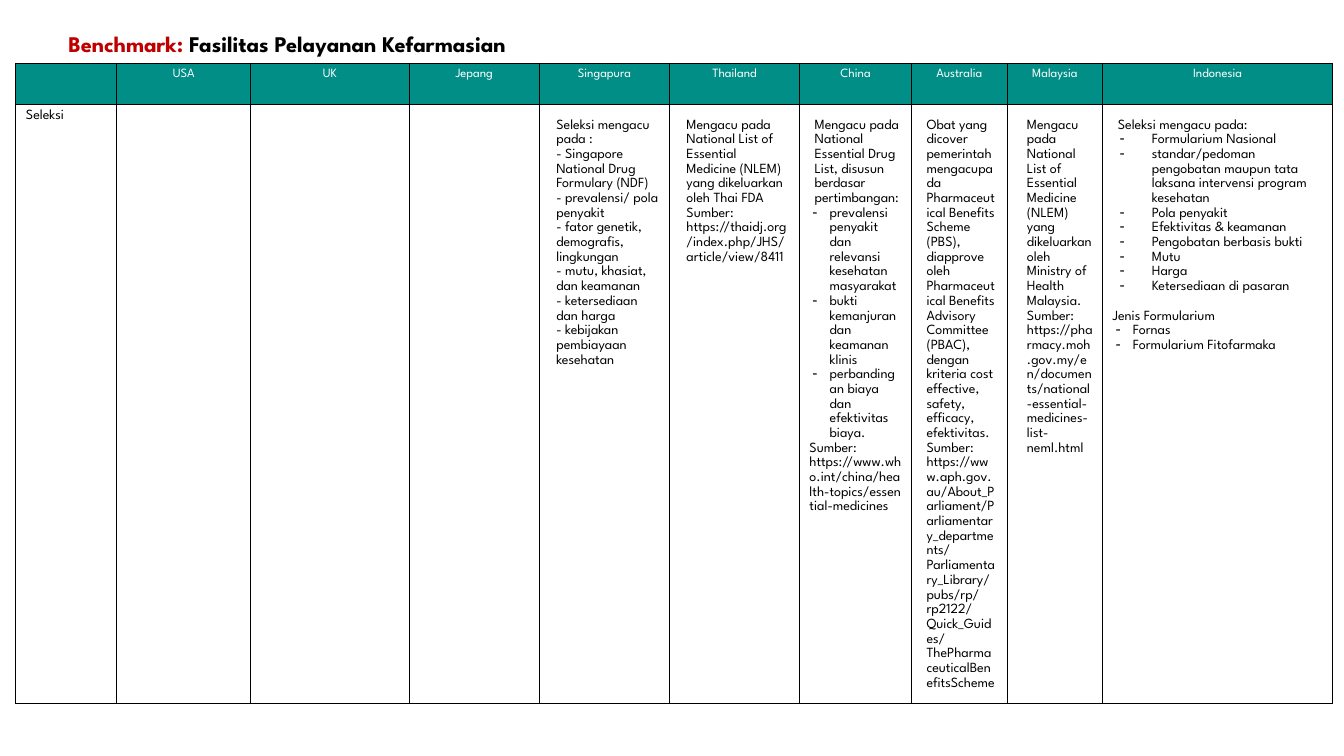
from typing import NamedTuple

from lxml import etree
from pptx import Presentation
from pptx import util as u
from pptx.dml.color import RGBColor
from pptx.enum import text
from pptx.oxml import ns

FONT = "League Spartan"
COLOURS = {"teal": "008E87", "red": "C00000", "black": "000000", "white": "FFFFFF"}


class Style(NamedTuple):
    left: float = 0
    hanging: float = 0
    bullet: bool = False
    before: float = 0


class Line(NamedTuple):
    text: str
    style: Style


class Country(NamedTuple):
    name: str
    width: float
    lines: tuple[Line, ...] = ()
    inset: float = 0.25


# Paragraph styles, in centimetres and points
FLUSH = Style()
SECTION = Style(before=10.5)
NEAR = Style(0.13)
INDENTED = Style(0.25)
DASH = Style(0.51, 0.43, True)
WIDE_DASH = Style(0.99, 0.81, True)


def lines(style: Style, *wording: str) -> tuple[Line, ...]:
    return tuple(Line(words, style) for words in wording)


COUNTRIES = [
    Country("USA", 3.38),
    Country("UK", 3.99),
    Country("Jepang", 3.28),
    Country("Singapura", 3.28, lines(
        INDENTED,
        "Seleksi mengacu pada :",
        "- Singapore National Drug Formulary (NDF)",
        "- prevalensi/ pola penyakit",
        "- fator genetik, demografis, lingkungan",
        "- mutu, khasiat, dan keamanan",
        "- ketersediaan dan harga",
        "- kebijakan pembiayaan kesehatan"), 0.18),
    Country("Thailand", 3.28, lines(
        INDENTED,
        "Mengacu pada National List of Essential Medicine (NLEM) yang dikeluarkan oleh Thai FDA",
        "Sumber: https://thaidj.org/index.php/JHS/article/view/8411"), 0.18),
    Country("China", 2.82, (
        *lines(NEAR, "Mengacu pada National Essential Drug List, disusun berdasar pertimbangan:"),
        *lines(DASH,
               "prevalensi penyakit dan relevansi kesehatan masyarakat",
               "bukti kemanjuran dan keamanan klinis",
               "perbandingan biaya dan efektivitas biaya."),
        *lines(FLUSH, "Sumber: https://www.who.int/china/health-topics/essential-medicines"))),
    Country("Australia", 2.41, lines(
        NEAR,
        "Obat yang dicover pemerintah mengacupada Pharmaceutical Benefits Scheme (PBS), "
        "diapprove oleh Pharmaceutical Benefits Advisory Committee (PBAC), "
        "dengan kriteria cost effective, safety, efficacy, efektivitas.",
        "Sumber: https://www.aph.gov.au/About_Parliament/Parliamentary_departments/"
        "Parliamentary_Library/pubs/rp/rp2122/Quick_Guides/ThePharmaceuticalBenefitsScheme")),
    Country("Malaysia", 2.41, lines(
        INDENTED,
        "Mengacu pada National List of Essential Medicine (NLEM) yang dikeluarkan oleh "
        "Ministry of Health Malaysia.",
        "Sumber: https://pharmacy.moh.gov.my/en/documents/"
        "national-essential-medicines-list-neml.html")),
    Country("Indonesia", 5.79, (
        *lines(NEAR, "Seleksi mengacu pada:"),
        *lines(WIDE_DASH,
               "Formularium Nasional",
               "standar/pedoman pengobatan maupun tata laksana intervensi program kesehatan",
               "Pola penyakit", "Efektivitas & keamanan", "Pengobatan berbasis bukti",
               "Mutu", "Harga", "Ketersediaan di pasaran"),
        *lines(SECTION, "Jenis Formularium"),
        *lines(DASH, "Fornas", "Formularium Fitofarmaka"))),
]


def format_span(span, size: float, colour: str, bold: bool = False) -> None:
    span.font.name = FONT
    span.font.size = u.Pt(size)
    span.font.bold = bold
    span.font.color.rgb = RGBColor.from_string(COLOURS[colour])


def style_cell(cell, fill: str, top: float, other: float) -> None:
    """Draw the four borders, then the fill that must follow them."""
    properties = cell._tc.get_or_add_tcPr()
    for side in "LRTB":
        width = u.Pt(top if side == "T" else other)
        border = etree.SubElement(properties, ns.qn(f"a:ln{side}"), w=str(width))
        solid = etree.SubElement(border, ns.qn("a:solidFill"))
        etree.SubElement(solid, ns.qn("a:srgbClr"), val=COLOURS["black"])
    cell.fill.solid()
    cell.fill.fore_color.rgb = RGBColor.from_string(COLOURS[fill])


def style_para(para, style: Style) -> None:
    para.line_spacing = 1.15
    if style.before:
        para.space_before = u.Pt(style.before)
    properties = para._p.get_or_add_pPr()
    properties.set("marL", str(u.Cm(style.left)))
    properties.set("indent", str(-u.Cm(style.hanging)))
    if style.bullet:
        colour = etree.SubElement(properties, ns.qn("a:buClr"))
        etree.SubElement(colour, ns.qn("a:srgbClr"), val=COLOURS["black"])
        etree.SubElement(properties, ns.qn("a:buChar"), char="-")


def fill_country(cell, country: Country) -> None:
    cell.margin_left = u.Cm(country.inset)
    cell.margin_top = cell.margin_bottom = u.Cm(0.33)
    frame = cell.text_frame
    frame.text = "\n".join(line.text for line in country.lines)
    for para, line in zip(frame.paragraphs, country.lines):
        style_para(para, line.style)
        format_span(para.runs[0], 10, "black")


def add_title(page) -> None:
    title = page.shapes.title
    title.left, title.top, title.width, title.height = (
        u.Cm(1.47), u.Cm(0.66), u.Cm(32.4), u.Cm(0.97))
    frame = title.text_frame
    frame.auto_size = text.MSO_AUTO_SIZE.NONE
    frame.vertical_anchor = text.MSO_ANCHOR.MIDDLE
    para = frame.paragraphs[0]
    para.alignment = text.PP_ALIGN.LEFT
    para.line_spacing = 0.9
    for words, colour in (("Benchmark: ", "red"), ("Fasilitas Pelayanan Kefarmasian", "black")):
        span = para.add_run()
        span.text = words
        format_span(span, 16, colour, bold=True)


def add_benchmark_table(page) -> None:
    columns = [Country("", 2.54), *COUNTRIES]
    width = sum(column.width for column in columns)
    table = page.shapes.add_table(
        2, len(columns), u.Cm(0.4), u.Cm(1.6), u.Cm(width), u.Cm(15.8)).table
    table.first_row = table.horz_banding = False
    table.rows[0].height, table.rows[1].height = u.Cm(0.71), u.Cm(15.09)

    for index, country in enumerate(columns):
        table.columns[index].width = u.Cm(country.width)
        header, body = table.cell(0, index), table.cell(1, index)
        style_cell(header, "teal", 1, 1)
        style_cell(body, "white", 1, 0.75)
        if country.name:
            header.text_frame.text = country.name
            para = header.text_frame.paragraphs[0]
            para.alignment = text.PP_ALIGN.CENTER
            format_span(para.runs[0], 9, "white")
        if country.lines:
            fill_country(body, country)

    # Row label
    label = table.cell(1, 0).text_frame
    label.text = "Seleksi"
    format_span(label.paragraphs[0].runs[0], 10, "black")


def main() -> None:
    deck = Presentation()
    deck.slide_width, deck.slide_height = u.Cm(33.87), u.Cm(19.05)
    page = deck.slides.add_slide(deck.slide_layouts[5])
    add_title(page)
    add_benchmark_table(page)
    deck.save("out.pptx")


if __name__ == "__main__":
    main()
